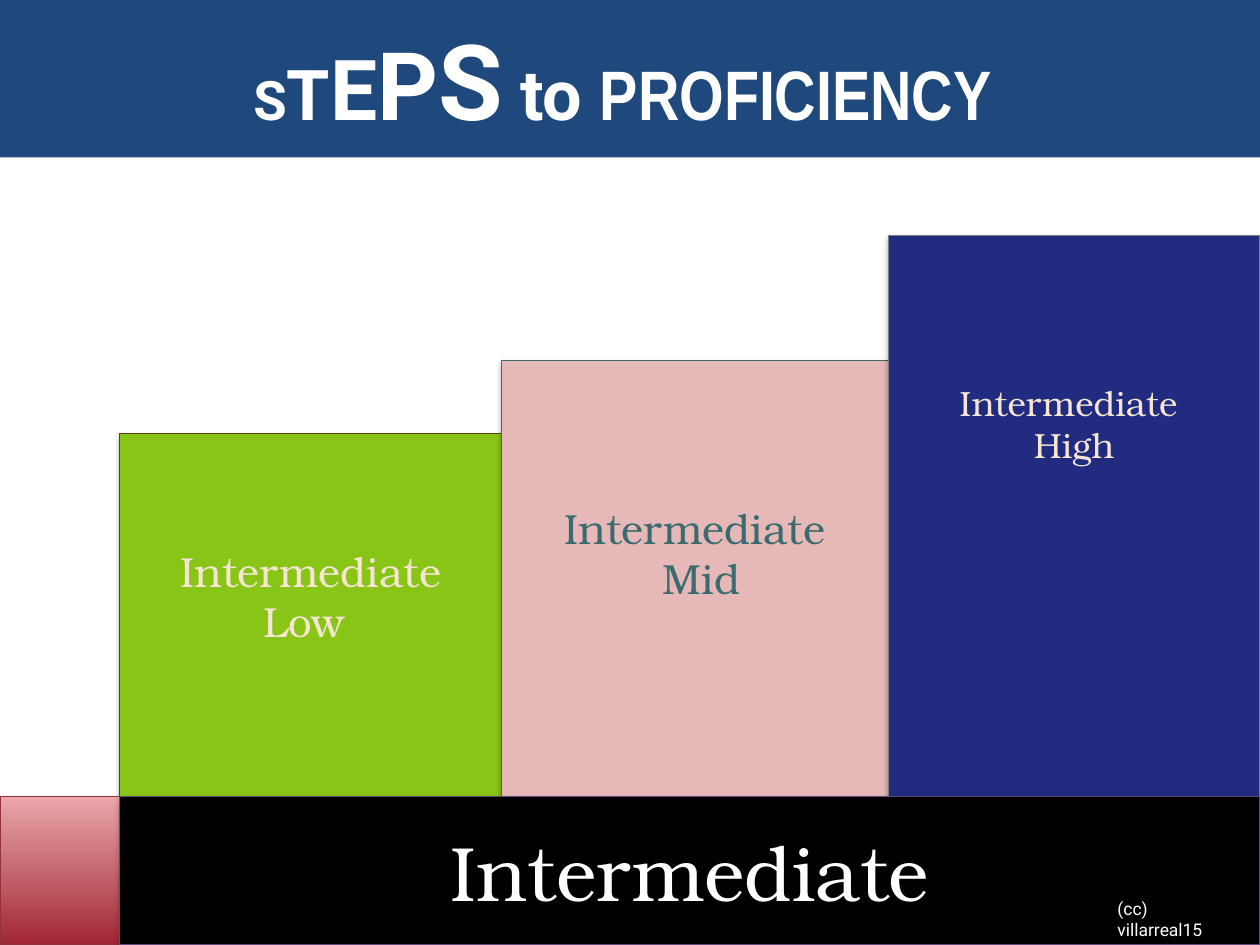
from dataclasses import dataclass

import lxml.etree
import pptx
import pptx.dml.color
import pptx.enum.shapes
import pptx.enum.text
import pptx.oxml.ns
import pptx.util
from pptx.util import Pt

WIDTH, HEIGHT = 720, 540
BASE_LEFT, BASE_TOP = 68.4, 455.04
SERIF, SANS, NARROW = "TeX Gyre Bonum", "Roboto", "Arial Narrow"
WHITE, CREAM, TEAL = "FFFFFF", "F5E5D2", "3B6B6F"
MIDDLE = pptx.enum.text.MSO_ANCHOR.MIDDLE
TOP = pptx.enum.text.MSO_ANCHOR.TOP
CENTER = pptx.enum.text.PP_ALIGN.CENTER
LEFT = pptx.enum.text.PP_ALIGN.LEFT


@dataclass
class Span:
    text: str
    size: float
    font: str
    color: str = WHITE
    bold: bool = False


@dataclass
class Step:
    lines: tuple[str, str]
    left: float
    top: float
    fill: str
    line: str
    text_color: str
    size: float
    text_offset: float


STEPS = [
    Step(("Intermediate", "Low "), BASE_LEFT, 247.68, "88C516", "603F15", CREAM, 24, 64),
    Step(("Intermediate", " Mid"), 286.56, 205.92, "E6B9B8", TEAL, TEAL, 24, 81),
    Step(("Intermediate ", "High"), 507.6, 134.64, "212C80", "808080", CREAM, 20, 83.5),
]

TITLE = [
    *(Span(letter, size, SANS, bold=True)
      for letter, size in zip("STEPS", (31.1, 40, 48, 54, 60))),
    Span(" to ", 40, SANS, bold=True),
    Span("PROFICIENCY ", 40, NARROW, bold=True),
]


def rgb(color: str) -> pptx.dml.color.RGBColor:
    return pptx.dml.color.RGBColor.from_string(color)


def add_block(page, left: float, top: float, right: float, bottom: float, fill: str = ""):
    """Add a rectangle given by its edges, without line or shadow."""
    block = page.shapes.add_shape(
        pptx.enum.shapes.MSO_SHAPE.RECTANGLE,
        Pt(left), Pt(top), Pt(right - left), Pt(bottom - top))
    block.shadow.inherit = False
    block.line.fill.background()
    if fill:
        block.fill.solid()
        block.fill.fore_color.rgb = rgb(fill)
    return block


def outline_and_shade(block, color: str) -> None:
    block.line.color.rgb = rgb(color)
    block.line.width = Pt(0.75)
    qn = pptx.oxml.ns.qn
    effects = block._element.spPr.find(qn("a:effectLst"))
    shadow = lxml.etree.SubElement(
        effects, qn("a:outerShdw"), blurRad=str(Pt(3.1)), dist=str(Pt(1.8)),
        dir="5400000", rotWithShape="0")
    tint = lxml.etree.SubElement(shadow, qn("a:srgbClr"), val="000000")
    lxml.etree.SubElement(tint, qn("a:alpha"), val="35000")


def write(box, lines: list[list[Span]], anchor=MIDDLE, align=CENTER) -> None:
    frame = box.text_frame
    frame.word_wrap = True
    frame.vertical_anchor = anchor
    for index, line in enumerate(lines):
        para = frame.add_paragraph() if index else frame.paragraphs[0]
        para.alignment = align
        for span in line:
            run = para.add_run()
            run.text = span.text
            run.font.size = Pt(span.size)
            run.font.name = span.font
            run.font.bold = span.bold
            run.font.color.rgb = rgb(span.color)


def add_step(page, step: Step, right: float) -> None:
    block = add_block(page, step.left, step.top, right, HEIGHT, step.fill)
    outline_and_shade(block, step.line)
    block.text_frame.margin_top = Pt(step.text_offset)
    write(block, [[Span(text, step.size, SERIF, step.text_color)] for text in step.lines], TOP)


def add_base(page) -> None:
    corner = add_block(page, 0, BASE_TOP, BASE_LEFT, HEIGHT)
    corner.fill.gradient()
    corner.fill.gradient_angle = 90
    for stop, color in zip(corner.fill.gradient_stops, ("A12734", "EAA7AA")):
        stop.color.rgb = rgb(color)
    outline_and_shade(corner, "92323C")

    base = add_block(page, BASE_LEFT, BASE_TOP, WIDTH, HEIGHT, "000000")
    outline_and_shade(base, "604A7B")
    write(base, [[Span("Intermediate", 44, SERIF)]])


def main() -> None:
    deck = pptx.Presentation()
    deck.slide_width, deck.slide_height = Pt(WIDTH), Pt(HEIGHT)
    page = deck.slides.add_slide(deck.slide_layouts[6])

    rights = [step.left for step in STEPS[1:]] + [WIDTH]
    for step, right in zip(STEPS, rights):
        add_step(page, step, right)

    write(add_block(page, 0, 0, WIDTH, 90, "1F497D"), [TITLE])
    add_base(page)

    credit = page.shapes.add_textbox(Pt(631.5), Pt(509.75), Pt(77), Pt(19.5))
    write(credit, [[Span("(cc) villarreal15", 10, SANS)]], TOP, LEFT)

    deck.save("out.pptx")


if __name__ == "__main__":
    main()
